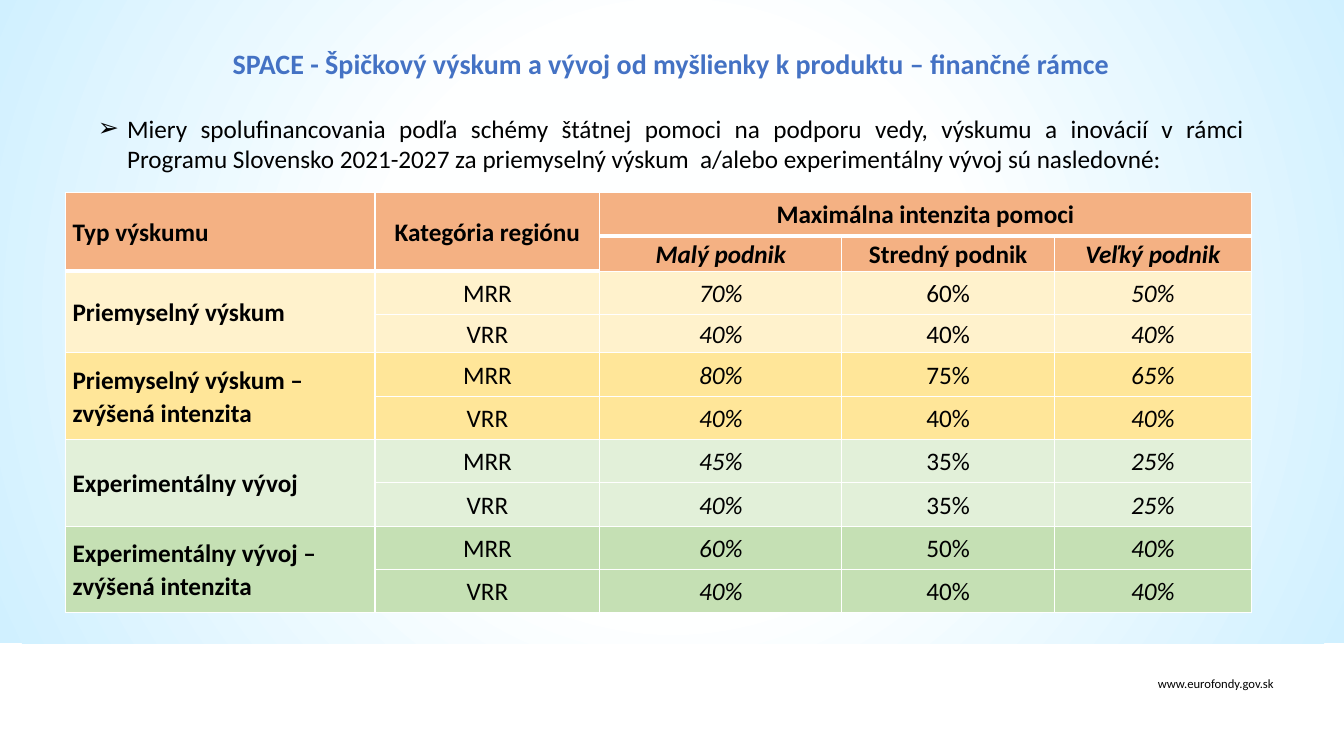
from lxml.etree import SubElement
from pptx import Presentation
from pptx.dml.color import RGBColor
from pptx.enum.shapes import MSO_SHAPE
from pptx.enum.text import MSO_ANCHOR, MSO_AUTO_SIZE, PP_ALIGN
from pptx.oxml import parse_xml
from pptx.oxml.ns import nsdecls, qn
from pptx.util import Inches, Pt


def color(value):
    return RGBColor.from_string(value)


def write(frame, text, size=18, hue="000000", bold=False, italic=False, align=PP_ALIGN.CENTER):
    frame.word_wrap = True
    paragraph = frame.paragraphs[0]
    paragraph.alignment = align
    paragraph.space_before = Pt(0)
    run = paragraph.add_run()
    run.text = text
    run.font.name = "Calibri"
    run.font.size = Pt(size)
    run.font.bold = bold
    run.font.italic = italic
    run.font.color.rgb = color(hue)
    return paragraph


presentation = Presentation()
presentation.slide_width = Inches(13.33)
presentation.slide_height = Inches(7.5)
slide = presentation.slides.add_slide(presentation.slide_layouts[1])
shapes = slide.shapes
title, body = slide.placeholders

background = shapes.add_shape(MSO_SHAPE.RECTANGLE, 0, Inches(-0.1), Inches(13.35), Inches(6.48))
background.shadow.inherit = False
background.line.fill.background()
background.fill.background()
properties = background.fill._xPr
no_fill = properties.find(qn("a:noFill"))
properties.replace(no_fill, parse_xml(
    f'<a:gradFill {nsdecls("a")} rotWithShape="1"><a:gsLst>'
    '<a:gs pos="0"><a:srgbClr val="FEFFFF"/></a:gs>'
    '<a:gs pos="40000"><a:srgbClr val="FEFFFF"/></a:gs>'
    '<a:gs pos="100000"><a:srgbClr val="D0F0FF"/></a:gs></a:gsLst>'
    '<a:path path="circle"><a:fillToRect l="50000" t="50000" r="50000" b="50000"/></a:path>'
    '</a:gradFill>'))
title._element.addprevious(background._element)

for placeholder, top, height in ((title, 0.4, 0.46), (body, 1.07, 0.72)):
    placeholder.left, placeholder.top = Inches(0.87), Inches(top)
    placeholder.width, placeholder.height = Inches(11.57), Inches(height)
    placeholder.text_frame.auto_size = MSO_AUTO_SIZE.NONE
title.text_frame.vertical_anchor = MSO_ANCHOR.MIDDLE
body.text_frame.vertical_anchor = MSO_ANCHOR.TOP

write(title.text_frame, "SPACE - Špičkový výskum a vývoj od myšlienky k produktu – finančné rámce",
      size=20, hue="4472C4", bold=True)
bullet = write(
    body.text_frame,
    "Miery spolufinancovania podľa schémy štátnej pomoci na podporu vedy, výskumu a inovácií v rámci "
    "Programu Slovensko 2021-2027 za priemyselný výskum  a/alebo experimentálny vývoj sú nasledovné:",
    align=PP_ALIGN.JUSTIFY)
bullet_properties = bullet._p.get_or_add_pPr()
bullet_properties.set("marL", str(Inches(0.29)))
bullet_properties.set("indent", str(Inches(-0.29)))
SubElement(bullet_properties, qn("a:buChar")).set("char", "➢")

website = shapes.add_textbox(Inches(10.73), Inches(6.66), Inches(2), Inches(0.25))
write(website.text_frame, "www.eurofondy.gov.sk", size=9, align=PP_ALIGN.RIGHT)

rows = [
    ("F4B183", ["Typ výskumu", "Kategória regiónu", "Maximálna intenzita pomoci", "", ""]),
    ("F4B183", ["", "", "Malý podnik", "Stredný podnik", "Veľký podnik"]),
    ("FFF2CC", ["Priemyselný výskum", "MRR", "70%", "60%", "50%"]),
    ("FFF2CC", ["", "VRR", "40%", "40%", "40%"]),
    ("FFE699", ["Priemyselný výskum – zvýšená intenzita", "MRR", "80%", "75%", "65%"]),
    ("FFE699", ["", "VRR", "40%", "40%", "40%"]),
    ("E2F0D9", ["Experimentálny vývoj", "MRR", "45%", "35%", "25%"]),
    ("E2F0D9", ["", "VRR", "40%", "35%", "25%"]),
    ("C5E0B4", ["Experimentálny vývoj – zvýšená intenzita", "MRR", "60%", "50%", "40%"]),
    ("C5E0B4", ["", "VRR", "40%", "40%", "40%"]),
]
column_widths = [3.07, 2.23, 2.4, 2.11, 1.95]
row_heights = [0.43, 0.35, 0.43, 0.38] + [0.43] * 6
table = shapes.add_table(len(rows), len(column_widths), Inches(0.65), Inches(1.91),
                         Inches(11.77), Inches(4.14)).table
table.horz_banding = False
for column, width in zip(table.columns, column_widths):
    column.width = Inches(width)
for row, height in zip(table.rows, row_heights):
    row.height = Inches(height)

for row_index, (fill, texts) in enumerate(rows):
    for column_index, text in enumerate(texts):
        cell = table.cell(row_index, column_index)
        cell.margin_left = cell.margin_right = Inches(0.07)
        cell.margin_top = cell.margin_bottom = 0
        cell.vertical_anchor = MSO_ANCHOR.MIDDLE
        header_end = row_index == 0 or (row_index == 1 and column_index < 2)
        borders = {"lnL": 1, "lnR": 1, "lnB": 3 if header_end else 1}
        for side, width in borders.items():
            border = SubElement(cell._tc.get_or_add_tcPr(), qn(f"a:{side}"), w=str(Pt(width)))
            border_fill = SubElement(border, qn("a:solidFill"))
            SubElement(border_fill, qn("a:srgbClr"), val="FFFFFF")
        cell.fill.solid()
        cell.fill.fore_color.rgb = color(fill)
        if text:
            paragraph = write(
                cell.text_frame, text,
                bold=row_index < 2 or column_index == 0,
                italic=row_index > 0 and column_index in (2, 4),
                align=PP_ALIGN.LEFT if column_index == 0 else PP_ALIGN.CENTER)
            paragraph.line_spacing = 1.07
            paragraph.space_after = Pt(2)

for row_index in range(0, len(rows), 2):
    table.cell(row_index, 0).merge(table.cell(row_index + 1, 0))
table.cell(0, 1).merge(table.cell(1, 1))
table.cell(0, 2).merge(table.cell(0, 4))

presentation.save("out.pptx")
